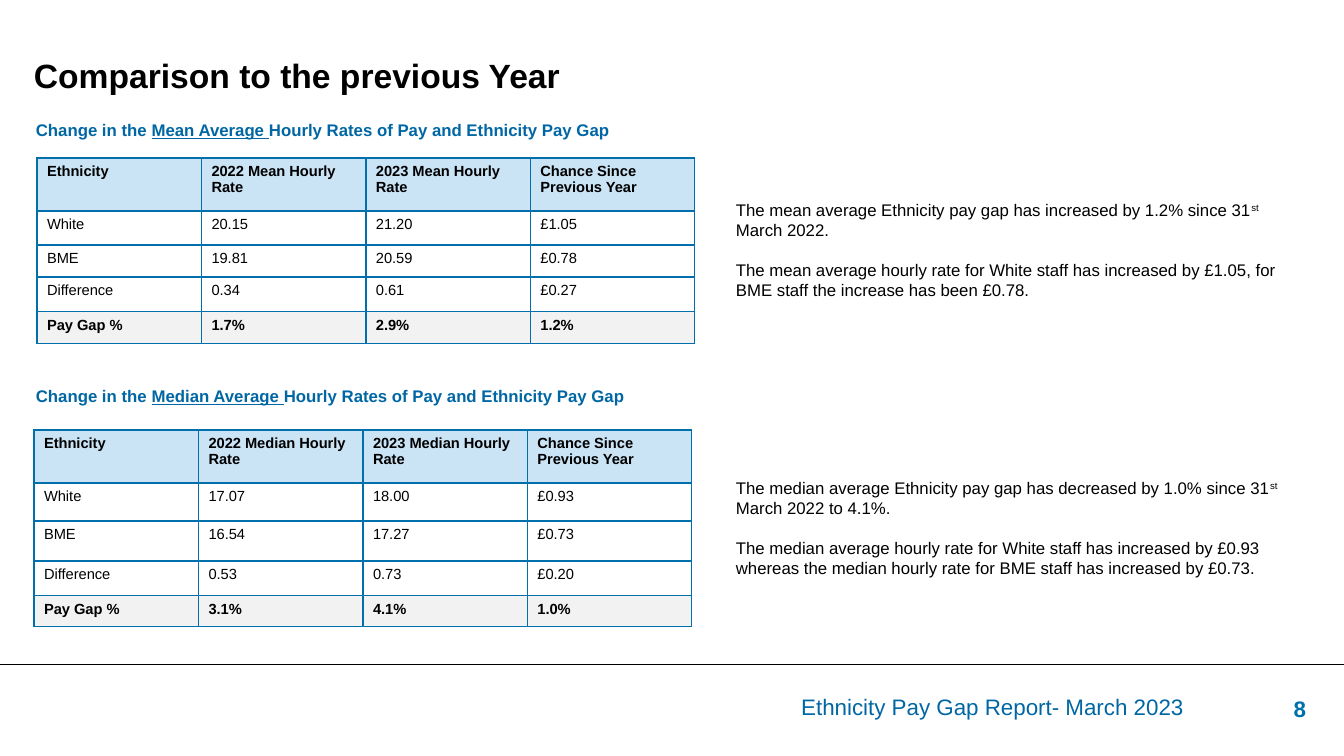
from lxml import etree
from pptx import Presentation, util as u
from pptx.dml.color import RGBColor
from pptx.enum import shapes, text
from pptx.oxml import ns

PX = 9071
BLUE, BORDER, BLACK, WHITE = "0067A4", "0070AD", "000000", "FFFFFF"
HEADER_FILL, TOTAL_FILL = "CAE4F6", "F2F2F2"
color = RGBColor.from_string


def add_span(para, words, size=12, ink=BLACK, bold=False, underline=False, raised=False):
    span = para.add_run()
    span.text = words
    font = span.font
    font.name, font.size, font.bold = "Arial", u.Pt(size), bold
    font.color.rgb = color(ink)
    if underline:
        font.underline = True
    if raised:
        font._element.set("baseline", "30000")


def add_box(left, top, width, height, inset=True, align=text.PP_ALIGN.LEFT):
    box = page.shapes.add_textbox(left * PX, top * PX, width * PX, height * PX)
    frame = box.text_frame
    frame.word_wrap = True
    if not inset:
        frame.margin_left = frame.margin_right = frame.margin_top = frame.margin_bottom = 0
    frame.paragraphs[0].alignment = align
    return frame.paragraphs[0]


deck = Presentation()
deck.slide_width, deck.slide_height = 1344 * PX, 756 * PX
page = deck.slides.add_slide(deck.slide_layouts[6])

number = add_box(1268, 690, 48, 37, align=text.PP_ALIGN.RIGHT)
add_span(number, "8", size=16, ink=BORDER, bold=True)

rule = page.shapes.add_connector(shapes.MSO_CONNECTOR.STRAIGHT, 0, 664 * PX, 1344 * PX, 664 * PX)
rule.line.color.rgb = color(BLACK)
rule.line.width = u.Pt(0.5)
etree.SubElement(rule._element.spPr, ns.qn("a:effectLst"))

footer = add_box(745, 696, 495, 35, inset=False, align=text.PP_ALIGN.CENTER)
footer.line_spacing = 0.9
add_span(footer, "Ethnicity Pay Gap Report- March 2023", size=16, ink=BLUE)

title = add_box(34, 59, 1024, 85, inset=False)
title.line_spacing = 0.9
add_span(title, "Comparison to the previous Year", size=24, bold=True)

sections = [
    dict(
        average="Mean", heading_top=115, table_at=(37, 158), row_heights=[53, 34, 32, 35, 32],
        rows=[
            ["White", "20.15", "21.20", "£1.05"],
            ["BME", "19.81", "20.59", "£0.78"],
            ["Difference", "0.34", "0.61", "£0.27"],
            ["Pay Gap %", "1.7%", "2.9%", "1.2%"],
        ],
        note_at=(726, 195, 581, 112),
        change="The mean average Ethnicity pay gap has increased by 1.2% since 31",
        change_end=" March 2022.",
        rates="The mean average hourly rate for White staff has increased by £1.05, "
              "for BME staff the increase has been £0.78.",
    ),
    dict(
        average="Median", heading_top=381, table_at=(34, 430), row_heights=[53, 38, 40, 35, 31],
        rows=[
            ["White", "17.07", "18.00", "£0.93"],
            ["BME", "16.54", "17.27", "£0.73"],
            ["Difference", "0.53", "0.73", "£0.20"],
            ["Pay Gap %", "3.1%", "4.1%", "1.0%"],
        ],
        note_at=(726, 473, 565, 112),
        change="The median average Ethnicity pay gap has decreased by 1.0% since 31",
        change_end=" March 2022 to 4.1%.",
        rates="The median average hourly rate for White staff has increased by £0.93 "
              "whereas the median hourly rate for BME staff has increased by £0.73.",
    ),
]

for section in sections:
    average = section["average"]
    heading = add_box(26, section["heading_top"], 658, 30)
    add_span(heading, "Change in the ", ink=BLUE, bold=True)
    add_span(heading, f"{average} Average ", ink=BLUE, bold=True, underline=True)
    add_span(heading, "Hourly Rates of Pay and Ethnicity Pay Gap", ink=BLUE, bold=True)

    header = ["Ethnicity", f"2022 {average} Hourly Rate", f"2023 {average} Hourly Rate",
              "Chance Since Previous Year"]
    rows = [header] + section["rows"]
    heights = section["row_heights"]
    left, top = section["table_at"]
    table = page.shapes.add_table(len(rows), len(header), left * PX, top * PX,
                                  658 * PX, sum(heights) * PX).table
    table.first_row = table.horz_banding = False
    fills = [HEADER_FILL, WHITE, WHITE, WHITE, TOTAL_FILL]
    for r, (row, height, fill) in enumerate(zip(rows, heights, fills)):
        table.rows[r].height = height * PX
        for c, words in enumerate(row):
            cell = table.cell(r, c)
            add_span(cell.text_frame.paragraphs[0], words, size=10.5, bold=fill != WHITE)
            props = cell._tc.get_or_add_tcPr()
            for side in ("lnL", "lnR", "lnT", "lnB"):
                edge = etree.SubElement(props, ns.qn(f"a:{side}"), w=str(u.Pt(1)))
                paint = etree.SubElement(edge, ns.qn("a:solidFill"))
                etree.SubElement(paint, ns.qn("a:srgbClr"), val=BORDER)
            cell.fill.solid()
            cell.fill.fore_color.rgb = color(fill)

    left, top, width, height = section["note_at"]
    note = page.shapes.add_shape(shapes.MSO_SHAPE.RECTANGLE, left * PX, top * PX,
                                 width * PX, height * PX)
    note.shadow.inherit = False
    note.fill.solid()
    note.fill.fore_color.rgb = color(WHITE)
    note.line.fill.background()
    frame = note.text_frame
    frame.word_wrap = True
    frame.vertical_anchor = text.MSO_ANCHOR.TOP
    change, rates = frame.paragraphs[0], frame.add_paragraph()
    change.alignment = rates.alignment = text.PP_ALIGN.LEFT
    rates.space_before = u.Pt(14)
    add_span(change, section["change"])
    add_span(change, "st", raised=True)
    add_span(change, section["change_end"])
    add_span(rates, section["rates"])

deck.save("out.pptx")
